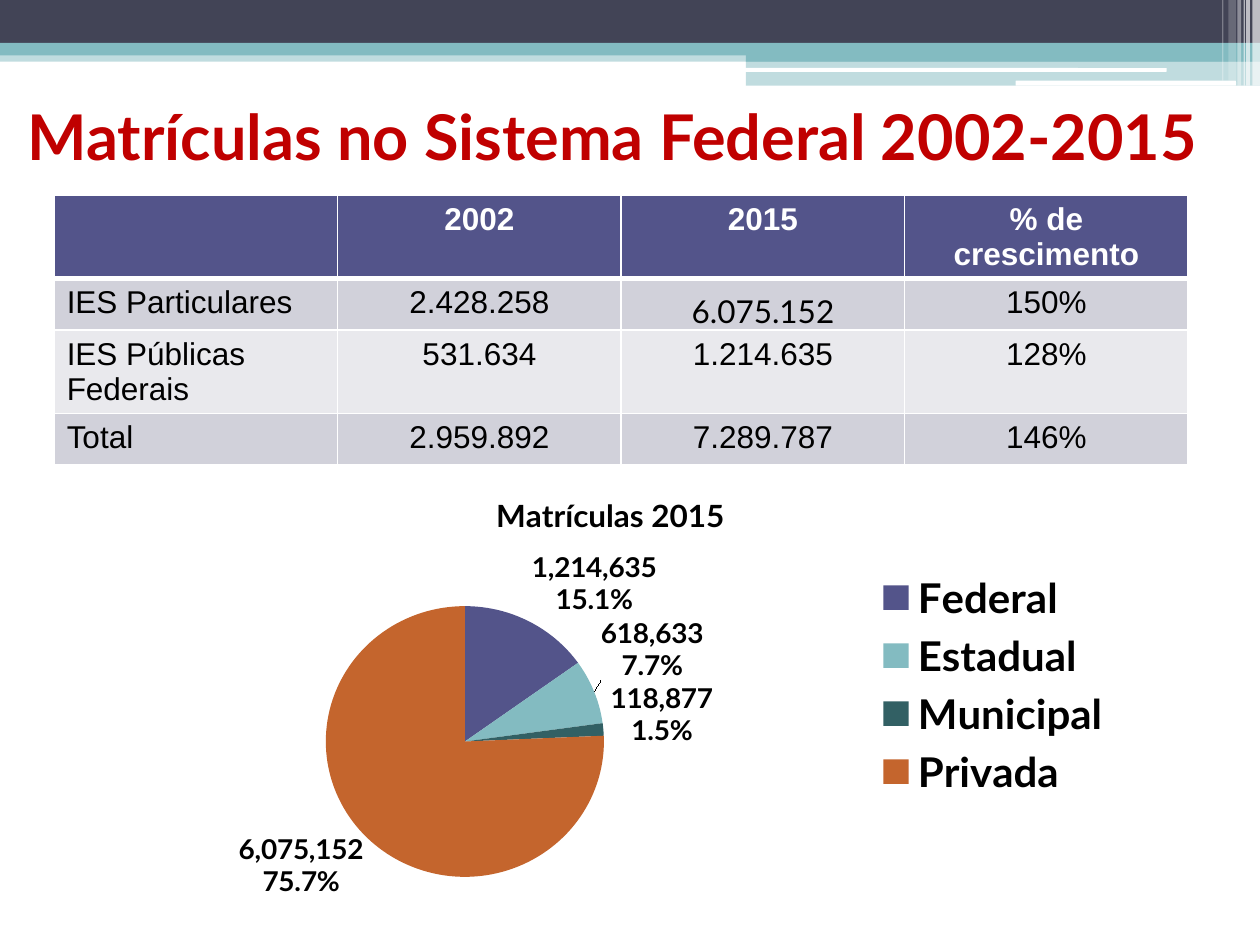
from copy import deepcopy

from lxml import etree
from pptx import Presentation
from pptx.chart.data import CategoryChartData
from pptx.dml.color import RGBColor
from pptx.enum.chart import XL_CHART_TYPE, XL_LABEL_POSITION, XL_LEGEND_POSITION
from pptx.enum.shapes import MSO_SHAPE
from pptx.enum.text import MSO_ANCHOR, MSO_AUTO_SIZE, PP_ALIGN
from pptx.oxml.ns import qn
from pptx.util import Inches, Pt

RECT, ROUNDED = MSO_SHAPE.RECTANGLE, MSO_SHAPE.ROUNDED_RECTANGLE
LEFT, CENTER = PP_ALIGN.LEFT, PP_ALIGN.CENTER
MIDDLE, BOTTOM, TOP = MSO_ANCHOR.MIDDLE, MSO_ANCHOR.BOTTOM, MSO_ANCHOR.TOP

DARK, TEAL, WHITE, BLACK = "424456", "83BBC1", "FFFFFF", "000000"
INDIGO, RED = "53548A", "C00000"
ROW_FILLS = ["D1D1DA", "E9E9ED"]

# Header decoration: left, top, width, height, colour, opacity %
BANDS = [
    (0, 0.4, 10, 0.09, TEAL, 50),
    (0, 0, 10, 0.34, DARK, 100),
    (0, 0.34, 10, 0.1, TEAL, 100),
    (5.92, 0.39, 4.08, 0.1, TEAL, 100),
    (5.92, 0.48, 4.08, 0.2, TEAL, 50),
]
HIGHLIGHTS = [
    (5.91, 0.54, 3.35, 0.03, WHITE, 100),
    (8.06, 0.64, 1.75, 0.04, WHITE, 100),
]
STRIPES = [
    (9.94, 0, 0.06, 0.68, WHITE, 65),
    (9.89, 0, 0.03, 0.68, WHITE, 65),
    (9.87, 0, 0.01, 0.68, WHITE, 60),
    (9.82, 0, 0.03, 0.68, WHITE, 40),
    (9.75, 0, 0.06, 0.64, WHITE, 20),
    (9.7, 0, 0.01, 0.64, WHITE, 30),
]

ENROLMENTS = [
    ["", "2002", "2015", "% de crescimento"],
    ["IES Particulares", "2.428.258", "6.075.152", "150%"],
    ["IES Públicas Federais", "531.634", "1.214.635", "128%"],
    ["Total", "2.959.892", "7.289.787", "146%"],
]
SHARES_2015 = [
    ("Federal", 1214635, INDIGO),
    ("Estadual", 618633, TEAL),
    ("Municipal", 118877, "326064"),
    ("Privada", 6075152, "C4652D"),
]
# Vertical label shifts, as a share of the chart height, by slice index
LABEL_SHIFTS = {1: -0.02, 2: 0.04}


def rgb(colour):
    return RGBColor.from_string(colour)


def set_attributes(target, values):
    for name, value in values.items():
        setattr(target, name, value)


def format_font(font, size, colour, name="Lato", bold=True):
    set_attributes(font, {"size": Pt(size), "name": name, "bold": bold})
    font.color.rgb = rgb(colour)


def add_bar(slide, kind, left, top, width, height, colour, opacity):
    bar = slide.shapes.add_shape(kind, *map(Inches, (left, top, width, height)))
    bar.shadow.inherit = False
    bar.fill.solid()
    bar.fill.fore_color.rgb = rgb(colour)
    bar.line.fill.background()
    if opacity < 100:
        colour_xml = bar.fill._xPr.find(".//" + qn("a:srgbClr"))
        etree.SubElement(colour_xml, qn("a:alpha"), val=str(opacity * 1000))


def add_title(slide, text):
    title = slide.shapes.title
    set_attributes(title, {"left": Inches(0.12), "top": Inches(0.68),
                           "width": Inches(9.88), "height": Inches(0.79)})
    title.text_frame.text = text
    set_attributes(title.text_frame, {"vertical_anchor": MIDDLE, "word_wrap": True,
                                      "auto_size": MSO_AUTO_SIZE.NONE})
    heading = title.text_frame.paragraphs[0]
    heading.alignment = LEFT
    format_font(heading.runs[0].font, 36, RED)


def set_bottom_border(cell, colour, width):
    border = etree.Element(qn("a:lnB"), w=str(Pt(width)))
    solid = etree.SubElement(border, qn("a:solidFill"))
    etree.SubElement(solid, qn("a:srgbClr"), val=colour)
    cell._tc.get_or_add_tcPr().insert(0, border)


def fill_cell(cell, text, row, column):
    header = row == 0
    cell.fill.solid()
    cell.fill.fore_color.rgb = rgb(INDIGO if header else ROW_FILLS[(row - 1) % 2])
    cell.vertical_anchor = TOP
    if header:
        set_bottom_border(cell, WHITE, 3)
    if not text:
        return
    cell.text = text
    paragraph = cell.text_frame.paragraphs[0]
    paragraph.alignment = LEFT if column == 0 else CENTER
    format_font(paragraph.runs[0].font, 18, WHITE if header else BLACK, "Arial", header)


def add_enrolment_table(slide, rows):
    frame = slide.shapes.add_table(len(rows), len(rows[0]), Inches(0.43), Inches(1.55),
                                   Inches(9), Inches(0.41 * len(rows)))
    table = frame.table
    for row, texts in enumerate(rows):
        for column, text in enumerate(texts):
            fill_cell(table.cell(row, column), text, row, column)

    # The 2015 private figure sits on the bottom edge of its cell
    private_2015 = table.cell(1, 2)
    set_attributes(private_2015, {"vertical_anchor": BOTTOM, "margin_left": Inches(0.01),
                                  "margin_top": Inches(0.01), "margin_right": Inches(0.01),
                                  "margin_bottom": 0})
    private_2015.text_frame.paragraphs[0].runs[0].font.name = "Lato"


def add_manual_layout(layout, settings):
    manual = etree.SubElement(layout, qn("c:manualLayout"))
    for tag, value in settings.items():
        etree.SubElement(manual, qn("c:" + tag), val=str(value))


def set_plot_layout(chart, x, y, w, h):
    plot_area = chart._chartSpace.find(".//" + qn("c:plotArea"))
    layout = plot_area.find(qn("c:layout"))
    if layout is None:
        layout = etree.Element(qn("c:layout"))
        plot_area.insert(0, layout)
    add_manual_layout(layout, {"layoutTarget": "inner", "xMode": "edge", "yMode": "edge",
                               "x": x, "y": y, "w": w, "h": h})


def shift_labels(labels_xml, shifts):
    """Give the shifted slices their own labels, formatted like the shared ones."""
    shared = [child for child in labels_xml if child.tag != qn("c:showLeaderLines")]
    for position, (index, shift) in enumerate(shifts.items()):
        label = etree.Element(qn("c:dLbl"))
        etree.SubElement(label, qn("c:idx"), val=str(index))
        add_manual_layout(etree.SubElement(label, qn("c:layout")), {"x": 0, "y": shift})
        label.extend(deepcopy(shared))
        labels_xml.insert(position, label)


def format_labels(labels):
    set_attributes(labels, {"show_value": True, "show_percentage": True,
                            "number_format": "0.0%", "number_format_is_linked": False,
                            "position": XL_LABEL_POSITION.OUTSIDE_END})
    format_font(labels.font, 16, BLACK)
    labels_xml = labels._element
    separator = etree.Element(qn("c:separator"))
    separator.text = "\n"
    labels_xml.find(qn("c:showBubbleSize")).addnext(separator)
    leader_lines = labels_xml.find(qn("c:showLeaderLines"))
    if leader_lines is None:
        leader_lines = etree.Element(qn("c:showLeaderLines"))
        separator.addnext(leader_lines)
    leader_lines.set("val", "1")
    shift_labels(labels_xml, LABEL_SHIFTS)


def add_share_chart(slide, shares):
    data = CategoryChartData(number_format="#,##0")
    data.categories = [name for name, _, _ in shares]
    data.add_series("Series 1", [value for _, value, _ in shares])
    chart = slide.shapes.add_chart(XL_CHART_TYPE.PIE, Inches(0.75), Inches(3.75),
                                   Inches(8.19), Inches(3.46), data).chart
    format_font(chart.font, 10, BLACK, bold=False)

    # Title and legend
    chart.has_title = True
    chart.chart_title.include_in_layout = False
    chart.chart_title.text_frame.text = "Matrículas 2015"
    format_font(chart.chart_title.text_frame.paragraphs[0].runs[0].font, 18, BLACK)
    chart.has_legend = True
    set_attributes(chart.legend, {"position": XL_LEGEND_POSITION.RIGHT,
                                  "include_in_layout": False})
    format_font(chart.legend.font, 24, BLACK)

    # Slices and their labels
    chart.plots[0].vary_by_categories = True
    series = chart.plots[0].series[0]
    for index, (_, _, colour) in enumerate(shares):
        slice_fill = series.points[index].format.fill
        slice_fill.solid()
        slice_fill.fore_color.rgb = rgb(colour)
    format_labels(series.data_labels)
    set_plot_layout(chart, 0.019, 0.315, 0.68, 0.638)


def main():
    prs = Presentation()
    prs.slide_width, prs.slide_height = Inches(10), Inches(7.5)
    slide = prs.slides.add_slide(prs.slide_layouts[5])
    for kind, bars in ((RECT, BANDS), (ROUNDED, HIGHLIGHTS), (RECT, STRIPES)):
        for bar in bars:
            add_bar(slide, kind, *bar)
    add_title(slide, "Matrículas no Sistema Federal 2002-2015")
    add_enrolment_table(slide, ENROLMENTS)
    add_share_chart(slide, SHARES_2015)
    prs.save("out.pptx")


if __name__ == "__main__":
    main()
